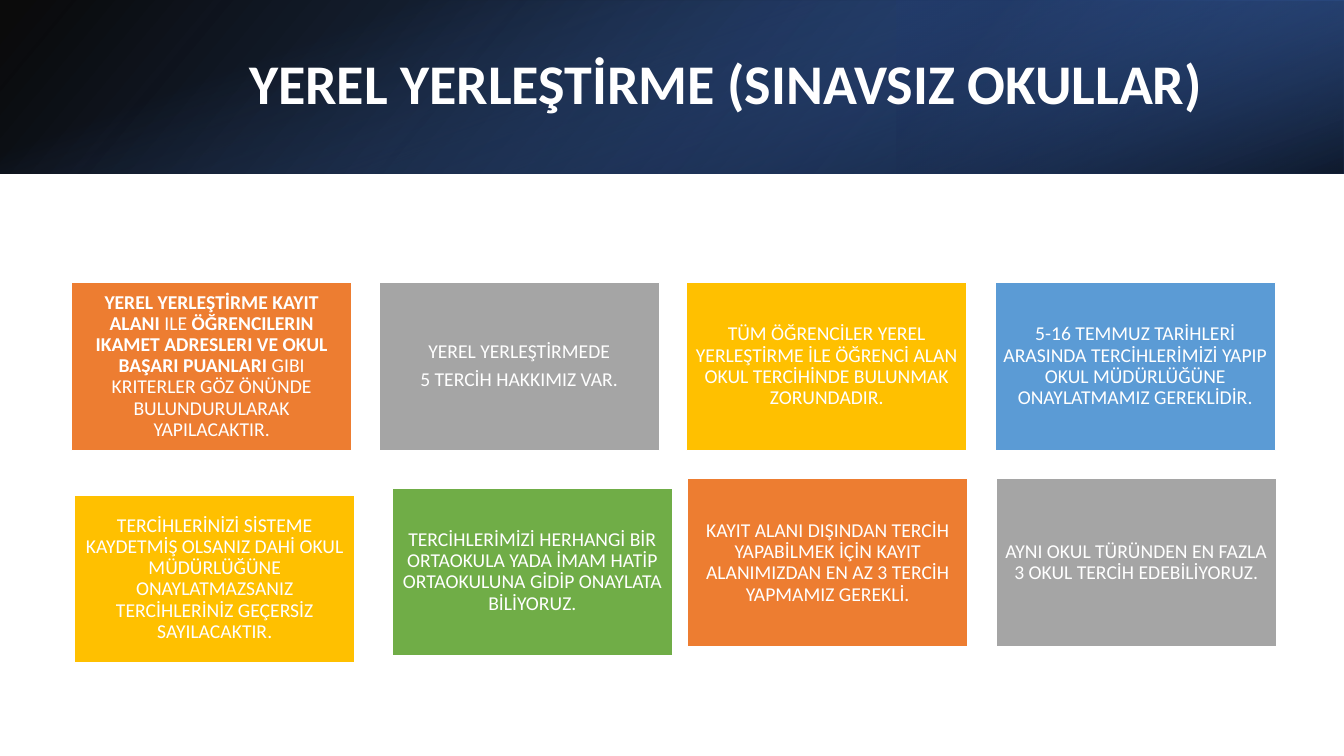
import pptx
import pptx.util
import pptx.dml.color
import pptx.enum.shapes
import pptx.enum.text
import pptx.oxml
import pptx.oxml.ns

COLORS = {
    "white": "FFFFFF", "black": "000000", "navy": "203864", "blue": "2F5597",
    "bright": "4472C4", "orange": "ED7D31", "gray": "A5A5A5",
    "gold": "FFC000", "sky": "5B9BD5", "green": "70AD47",
}
CENTER = pptx.enum.text.PP_ALIGN.CENTER
LEFT = pptx.enum.text.PP_ALIGN.LEFT


def px(n):
    return pptx.util.Emu(n * 9144)


def rgb(name):
    return pptx.dml.color.RGBColor.from_string(COLORS[name])


def apply(obj, formats):
    for key, value in formats.items():
        setattr(obj, key, value)


class Deck:
    font = "Calibri"

    def __init__(self, width, height):
        self.prs = pptx.Presentation()
        apply(self.prs, {"slide_width": px(width), "slide_height": px(height)})
        self.s = self.prs.slides.add_slide(self.prs.slide_layouts[6])

    def rect(self, box):
        sp = self.s.shapes.add_shape(
            pptx.enum.shapes.MSO_SHAPE.RECTANGLE, *map(px, box))
        sp.shadow.inherit = False
        return sp

    def gradient(self, box, stops, angle, rotation=0, flip=False):
        sp = self.rect(box)
        sp.rotation = rotation
        if flip:
            sp._element.spPr.find(pptx.oxml.ns.qn("a:xfrm")).set("flipH", "1")
        sp.line.fill.background()
        sp.fill.gradient()
        sp.fill.gradient_angle = 360 - angle
        for stop, (position, color, _) in zip(sp.fill.gradient_stops, stops):
            stop.position = position / 100
            stop.color.rgb = rgb(color)
        colors = sp._element.spPr.iter(pptx.oxml.ns.qn("a:srgbClr"))
        for clr, (_, _, opacity) in zip(list(colors), stops):
            alpha = pptx.oxml.parse_xml(
                f'<a:alpha {pptx.oxml.ns.nsdecls("a")} val="{opacity * 1000}"/>')
            clr.append(alpha)

    def text(self, sp, paragraphs, size, inset, align, after=0):
        tf = sp.text_frame
        apply(tf, {
            "word_wrap": True,
            "vertical_anchor": pptx.enum.text.MSO_ANCHOR.MIDDLE,
            **{f"margin_{side}": px(inset)
               for side in ("left", "top", "right", "bottom")},
        })
        for i, runs in enumerate(paragraphs):
            p = tf.add_paragraph() if i else tf.paragraphs[0]
            apply(p, {"alignment": align, "line_spacing": 0.9,
                      "space_after": pptx.util.Pt(after)})
            for content, bold in runs:
                r = p.add_run()
                r.text = content
                apply(r.font, {"name": self.font, "bold": bold,
                               "size": pptx.util.Pt(size)})
                r.font.color.rgb = rgb("white")

    def title(self, box, content):
        sp = self.s.shapes.add_textbox(*map(px, box))
        self.text(sp, [[(content, True)]], 40, 0, LEFT)

    def card(self, x, y, color, paragraphs):
        sp = self.rect((x, y, 278, 167))
        sp.fill.solid()
        sp.fill.fore_color.rgb = rgb(color)
        sp.line.color.rgb = rgb("white")
        sp.line.width = pptx.util.Pt(1)
        self.text(sp, paragraphs, 14, 6, CENTER, 5)


def plain(*lines):
    return [[(line, False)] for line in lines]


TOP_CARDS = [
    ("orange", [[
        ("YEREL YERLEŞTİRME KAYIT ALANI", True),
        (" ILE ", False),
        ("ÖĞRENCILERIN IKAMET ADRESLERI VE OKUL BAŞARI PUANLARI", True),
        (" GIBI KRITERLER GÖZ ÖNÜNDE BULUNDURULARAK YAPILACAKTIR.", False),
    ]]),
    ("gray", plain("YEREL YERLEŞTİRMEDE", "5 TERCİH HAKKIMIZ VAR.")),
    ("gold", plain("TÜM ÖĞRENCİLER YEREL YERLEŞTİRME İLE ÖĞRENCİ ALAN "
                   "OKUL TERCİHİNDE BULUNMAK ZORUNDADIR.")),
    ("sky", plain("5-16 TEMMUZ TARİHLERİ ARASINDA TERCİHLERİMİZİ YAPIP "
                  "OKUL MÜDÜRLÜĞÜNE ONAYLATMAMIZ GEREKLİDİR.")),
]
BOTTOM_CARDS = [
    (74, 491, "gold", plain(
        "TERCİHLERİNİZİ SİSTEME KAYDETMİŞ OLSANIZ DAHİ OKUL MÜDÜRLÜĞÜNE "
        "ONAYLATMAZSANIZ TERCİHLERİNİZ GEÇERSİZ SAYILACAKTIR.")),
    (389, 484, "green", plain(
        "TERCİHLERİMİZİ HERHANGİ BİR ORTAOKULA YADA İMAM HATİP "
        "ORTAOKULUNA GİDİP ONAYLATA BİLİYORUZ.")),
    (682, 475, "orange", plain(
        "KAYIT ALANI DIŞINDAN TERCİH YAPABİLMEK İÇİN KAYIT "
        "ALANIMIZDAN EN AZ 3 TERCİH YAPMAMIZ GEREKLİ.")),
    (988, 475, "gray", plain(
        "AYNI OKUL TÜRÜNDEN EN FAZLA 3 OKUL TERCİH EDEBİLİYORUZ.")),
]


def main():
    deck = Deck(1333, 750)
    deck.gradient((0, 0, 1333, 172),
                  [(0, "black", 96), (100, "blue", 100)], 140, flip=True)
    deck.gradient((889, 0, 444, 172),
                  [(19, "navy", 68), (100, "bright", 79)], 320, 180, True)
    deck.gradient((580, -580, 172, 1333),
                  [(23, "bright", 0), (99, "black", 74)], 340, 90)
    deck.title((247, 38, 1001, 96), "YEREL YERLEŞTİRME (SINAVSIZ OKULLAR)")
    for i, (color, paragraphs) in enumerate(TOP_CARDS):
        deck.card(71 + 916 * i // 3, 280, color, paragraphs)
    for card in BOTTOM_CARDS:
        deck.card(*card)
    deck.prs.save("out.pptx")


if __name__ == "__main__":
    main()
